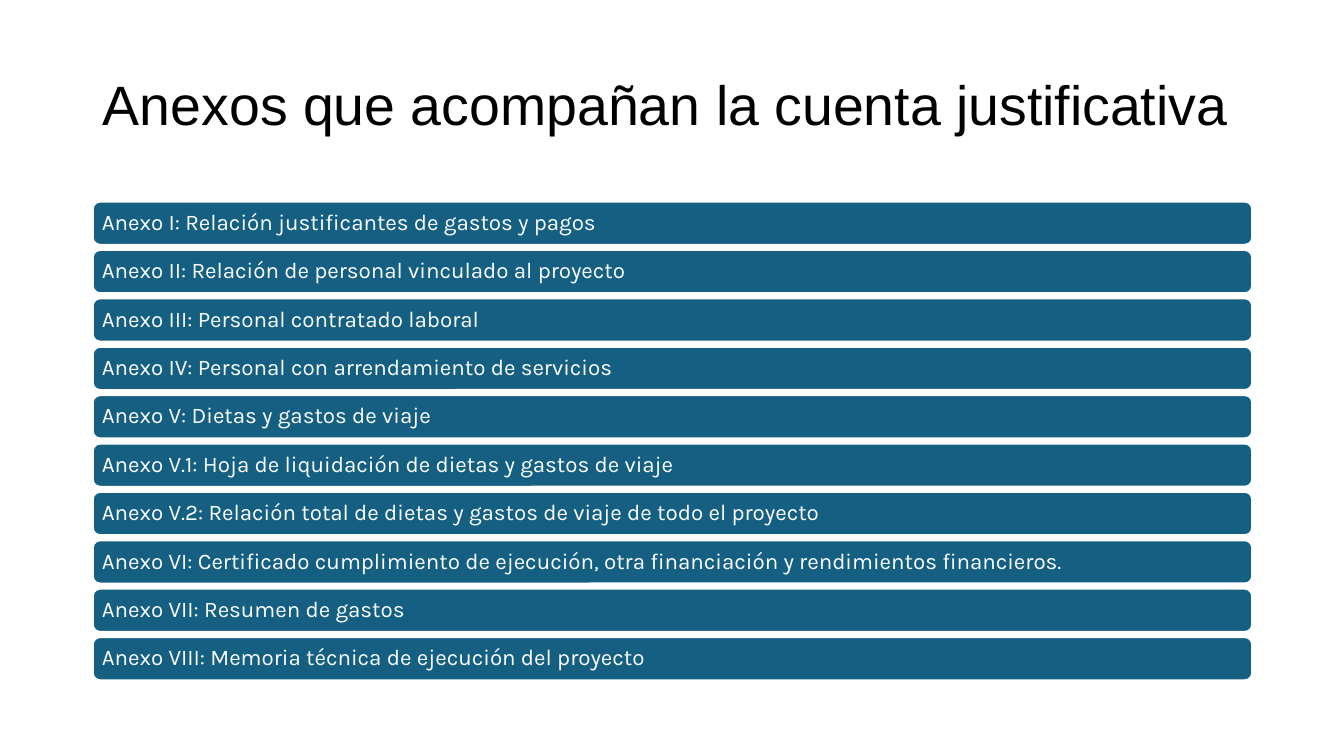
from dataclasses import dataclass

from pptx import Presentation
from pptx.dml.color import RGBColor
from pptx.enum.shapes import MSO_SHAPE
from pptx.enum.text import MSO_ANCHOR, MSO_AUTO_SIZE, PP_ALIGN
from pptx.slide import Slide
from pptx.text.text import TextFrame
from pptx.util import Emu, Pt

EMU_PER_PX = 9144


def px(n: int) -> Emu:
    return Emu(n * EMU_PER_PX)


@dataclass(frozen=True)
class Theme:
    black: RGBColor = RGBColor(0x00, 0x00, 0x00)
    white: RGBColor = RGBColor(0xFF, 0xFF, 0xFF)
    teal: RGBColor = RGBColor(0x15, 0x60, 0x82)
    title_font: str = "Arial"
    body_font: str = "Karla"
    title_size: float = 39.6
    body_size: float = 16
    border: float = 1.5
    line_spacing: float = 0.9


@dataclass(frozen=True)
class Annex:
    number: str
    subject: str

    def label(self) -> str:
        return f"Anexo {self.number}: {self.subject}"


THEME = Theme()
LEFT, WIDTH = 92, 1150
TITLE_TOP, TITLE_HEIGHT, TITLE_BOTTOM_INSET = 40, 145, 17
ROWS_TOP, ROW_HEIGHT, ROW_PITCH, ROW_INSET = 200, 43, 48, 7

TITLE = "Anexos que acompañan la cuenta justificativa"
ANNEXES = [
    Annex("I", "Relación justificantes de gastos y pagos"),
    Annex("II", "Relación de personal vinculado al proyecto"),
    Annex("III", "Personal contratado laboral"),
    Annex("IV", "Personal con arrendamiento de servicios"),
    Annex("V", "Dietas y gastos de viaje"),
    Annex("V.1", "Hoja de liquidación de dietas y gastos de viaje"),
    Annex("V.2", "Relación total de dietas y gastos de viaje de todo el proyecto"),
    Annex("VI", "Certificado cumplimiento de ejecución, otra financiación y rendimientos financieros."),
    Annex("VII", "Resumen de gastos"),
    Annex("VIII", "Memoria técnica de ejecución del proyecto"),
]


def write(tf: TextFrame, text: str, font: str, size: float, color: RGBColor) -> None:
    tf.word_wrap = True
    tf.auto_size = MSO_AUTO_SIZE.NONE
    tf.vertical_anchor = MSO_ANCHOR.MIDDLE
    p = tf.paragraphs[0]
    p.alignment = PP_ALIGN.LEFT
    p.line_spacing = THEME.line_spacing
    r = p.add_run()
    r.text = text
    r.font.name = font
    r.font.size = Pt(size)
    r.font.color.rgb = color


def draw_title(s: Slide, text: str) -> None:
    sp = s.shapes.title
    sp.left, sp.top = px(LEFT), px(TITLE_TOP)
    sp.width, sp.height = px(WIDTH), px(TITLE_HEIGHT)
    sp.text_frame.margin_bottom = px(TITLE_BOTTOM_INSET)
    write(sp.text_frame, text, THEME.title_font, THEME.title_size, THEME.black)


def draw_annex(s: Slide, annex: Annex, row: int) -> None:
    sp = s.shapes.add_shape(
        MSO_SHAPE.ROUNDED_RECTANGLE,
        px(LEFT), px(ROWS_TOP + row * ROW_PITCH), px(WIDTH), px(ROW_HEIGHT),
    )
    sp.shadow.inherit = False
    sp.fill.solid()
    sp.fill.fore_color.rgb = THEME.teal
    sp.line.color.rgb = THEME.white
    sp.line.width = Pt(THEME.border)
    tf = sp.text_frame
    tf.margin_left = tf.margin_right = px(ROW_INSET)
    tf.margin_top = tf.margin_bottom = px(ROW_INSET)
    write(tf, annex.label(), THEME.body_font, THEME.body_size, THEME.white)


def main() -> None:
    prs = Presentation()
    prs.slide_width, prs.slide_height = px(1333), px(750)
    s = prs.slides.add_slide(prs.slide_layouts.get_by_name("Title Only"))
    draw_title(s, TITLE)
    for row, annex in enumerate(ANNEXES):
        draw_annex(s, annex, row)
    prs.save("out.pptx")


if __name__ == "__main__":
    main()
